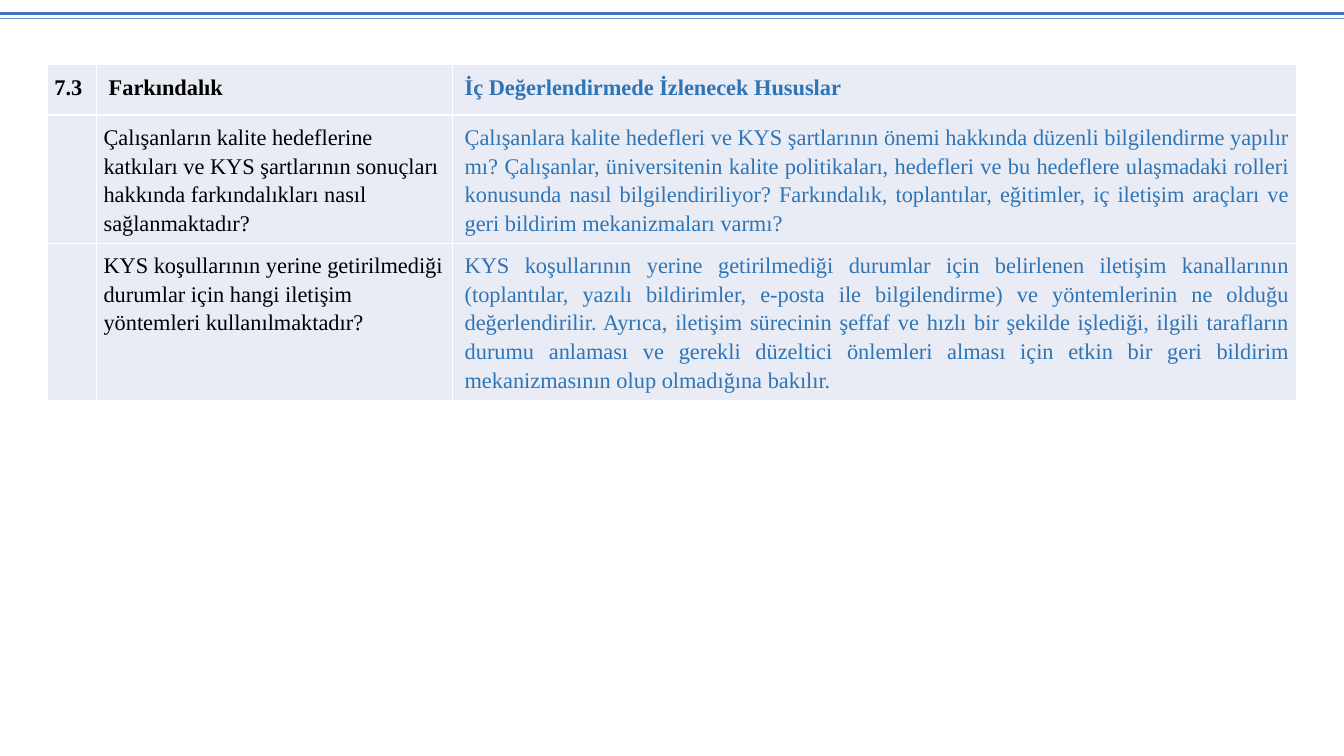
from dataclasses import dataclass

from lxml.etree import SubElement
from pptx import Presentation
from pptx.dml.color import RGBColor
from pptx.enum.shapes import MSO_CONNECTOR
from pptx.enum.text import PP_ALIGN
from pptx.oxml.ns import qn
from pptx.slide import Slide
from pptx.table import Table, _Cell
from pptx.util import Cm, Pt

COLORS = {
    "thick": "4472C4",
    "thin": "5B9BD5",
    "fill": "E9EBF5",
    "edge": "FFFFFF",
    "black": "000000",
    "blue": "2E75B6",
}
FONT = "Times New Roman"
WIDTH, HEIGHT = 33.87, 19.05
LEFT, TOP = 1.2, 1.63
COLS = (1.24, 8.97, 21.26)
ROWS = (1.27, 3.23, 3.96)
INSET = 0.17
INDENT = 0.13


@dataclass
class Rule:
    top: float
    color: str
    weight: float


@dataclass
class Entry:
    code: str
    topic: str
    check: str
    head: bool = False


RULES = [Rule(0.46, "thin", 1), Rule(0.33, "thick", 2.25)]

ENTRIES = [
    Entry("7.3", "Farkındalık", "İç Değerlendirmede İzlenecek Hususlar", head=True),
    Entry(
        "",
        "Çalışanların kalite hedeflerine katkıları ve KYS şartlarının sonuçları "
        "hakkında farkındalıkları nasıl sağlanmaktadır?",
        "Çalışanlara kalite hedefleri ve KYS şartlarının önemi hakkında düzenli "
        "bilgilendirme yapılır mı? Çalışanlar, üniversitenin kalite politikaları, "
        "hedefleri ve bu hedeflere ulaşmadaki rolleri konusunda nasıl "
        "bilgilendiriliyor? Farkındalık, toplantılar, eğitimler, iç iletişim "
        "araçları ve geri bildirim mekanizmaları varmı?",
    ),
    Entry(
        "",
        "KYS koşullarının yerine getirilmediği durumlar için hangi iletişim "
        "yöntemleri kullanılmaktadır?",
        "KYS koşullarının yerine getirilmediği durumlar için belirlenen iletişim "
        "kanallarının (toplantılar, yazılı bildirimler, e-posta ile bilgilendirme) "
        "ve yöntemlerinin ne olduğu değerlendirilir. Ayrıca, iletişim sürecinin "
        "şeffaf ve hızlı bir şekilde işlediği, ilgili tarafların durumu anlaması ve "
        "gerekli düzeltici önlemleri alması için etkin bir geri bildirim "
        "mekanizmasının olup olmadığına bakılır.",
    ),
]


def paint(name: str) -> RGBColor:
    return RGBColor.from_string(COLORS[name])


def draw_rule(slide: Slide, rule: Rule) -> None:
    line = slide.shapes.add_connector(
        MSO_CONNECTOR.STRAIGHT, 0, Cm(rule.top), Cm(WIDTH), Cm(rule.top)
    )
    line.line.color.rgb = paint(rule.color)
    line.line.width = Pt(rule.weight)
    SubElement(line._element.spPr, qn("a:effectLst"))


def style_cell(cell: _Cell) -> None:
    props = cell._tc.get_or_add_tcPr()
    for side in ("lnL", "lnR", "lnT", "lnB"):
        edge = SubElement(props, qn(f"a:{side}"), w=str(Pt(1)))
        solid = SubElement(edge, qn("a:solidFill"))
        SubElement(solid, qn("a:srgbClr"), val=COLORS["edge"])
    cell.fill.solid()
    cell.fill.fore_color.rgb = paint("fill")
    cell.margin_left = cell.margin_right = Cm(INSET)
    cell.margin_top = cell.margin_bottom = Cm(INSET)


def write(
    cell: _Cell,
    text: str,
    *,
    color: str = "black",
    bold: bool = False,
    indent: float = 0,
    align: PP_ALIGN = PP_ALIGN.LEFT,
) -> None:
    para = cell.text_frame.paragraphs[0]
    para.alignment = align
    para.line_spacing = 1.15
    props = para._p.get_or_add_pPr()
    props.set("marL", str(Cm(indent)))
    props.set("indent", "0")
    run = para.add_run()
    run.text = text
    run.font.name = FONT
    run.font.size = Pt(16)
    run.font.bold = bold
    run.font.color.rgb = paint(color)


def fill_row(table: Table, row: int, entry: Entry) -> None:
    code, topic, check = (table.cell(row, col) for col in range(len(COLS)))
    for cell in (code, topic, check):
        style_cell(cell)
    if entry.code:
        write(code, entry.code, bold=entry.head)
    write(topic, entry.topic, bold=entry.head, indent=INDENT if entry.head else 0)
    write(
        check,
        entry.check,
        color="blue",
        bold=entry.head,
        indent=INDENT,
        align=PP_ALIGN.JUSTIFY,
    )


def draw_table(slide: Slide) -> None:
    frame = slide.shapes.add_table(
        len(ROWS), len(COLS), Cm(LEFT), Cm(TOP), Cm(sum(COLS)), Cm(sum(ROWS))
    )
    table = frame.table
    table.first_row = table.horz_banding = False
    for col, width in zip(table.columns, COLS):
        col.width = Cm(width)
    for row, height in zip(table.rows, ROWS):
        row.height = Cm(height)
    for index, entry in enumerate(ENTRIES):
        fill_row(table, index, entry)


def main() -> None:
    deck = Presentation()
    deck.slide_width, deck.slide_height = Cm(WIDTH), Cm(HEIGHT)
    slide = deck.slides.add_slide(deck.slide_layouts[6])
    for rule in RULES:
        draw_rule(slide, rule)
    draw_table(slide)
    deck.save("out.pptx")


if __name__ == "__main__":
    main()
